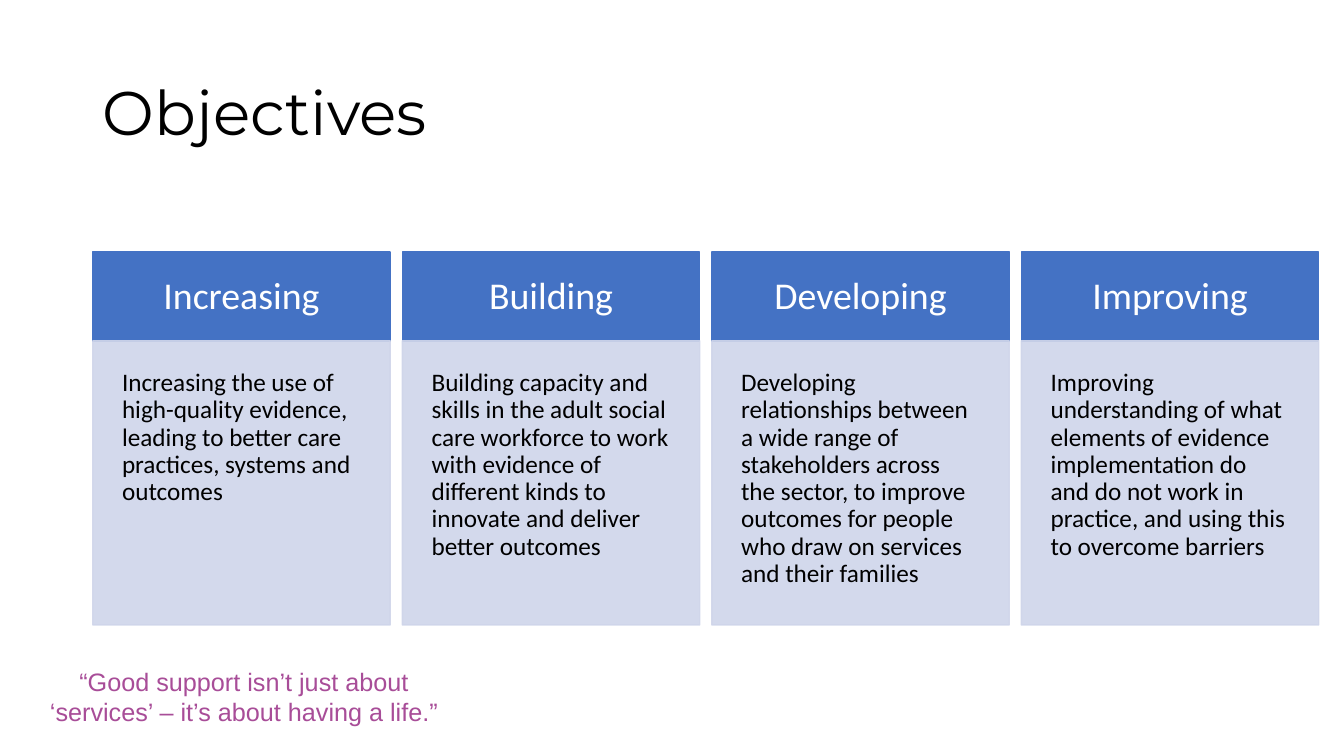
"""Build the Objectives slide: four headed columns and a quote."""
from pptx import Presentation
from pptx.dml.color import RGBColor
from pptx.enum.shapes import MSO_SHAPE as Shape
from pptx.enum.text import MSO_ANCHOR as Anchor, PP_ALIGN as Align
from pptx.oxml.ns import qn
from pptx.util import Inches, Pt
from lxml.etree import SubElement

BLUE = RGBColor(0x44, 0x72, 0xC4)
PALE = RGBColor(0xCF, 0xD5, 0xEA)
PLUM = RGBColor(0xA8, 0x4D, 0x98)
BLACK = RGBColor(0, 0, 0)
WHITE = RGBColor(0xFF, 0xFF, 0xFF)

COLUMNS = [
    ("Increasing", "Increasing the use of high-quality evidence, leading to "
     "better care practices, systems and outcomes"),
    ("Building", "Building capacity and skills in the adult social care "
     "workforce to work with evidence of different kinds to innovate and "
     "deliver better outcomes"),
    ("Developing", "Developing relationships between a wide range of "
     "stakeholders across the sector, to improve outcomes for people who "
     "draw on services and their families"),
    ("Improving", "Improving understanding of what elements of evidence "
     "implementation do and do not work in practice, and using this to "
     "overcome barriers"),
]
QUOTE = ["“Good support isn’t just about", "‘services’ – it’s about having a life.”"]
LEFT, STEP, WIDTH = 0.92, 3.07, 2.95


def write(para, text, font, size, color, align=Align.LEFT, space=None):
    para.alignment = align
    para.line_spacing = space
    run = para.add_run()
    run.text = text
    run.font.name = font
    run.font.size = Pt(size)
    run.font.color.rgb = color


def add_panel(left, top, height, color, inset, anchor):
    panel = slide.shapes.add_shape(
        Shape.RECTANGLE, Inches(left), Inches(top), Inches(WIDTH), Inches(height))
    panel.shadow.inherit = False
    panel.fill.solid()
    panel.fill.fore_color.rgb = color
    panel.line.color.rgb = color
    panel.line.width = Pt(1)
    frame = panel.text_frame
    frame.word_wrap = True
    frame.vertical_anchor = anchor
    frame.margin_left = frame.margin_right = Inches(inset)
    frame.margin_top = frame.margin_bottom = Inches(inset)
    return panel


prs = Presentation()
prs.slide_width, prs.slide_height = Inches(13.33), Inches(7.5)
slide = prs.slides.add_slide(prs.slide_layouts[5])

title = slide.shapes.title
title.left, title.top = Inches(LEFT), Inches(0.77)
title.width, title.height = Inches(11.5), Inches(1.23)
title.text_frame.vertical_anchor = Anchor.TOP
write(title.text_frame.paragraphs[0], "Objectives", "Montserrat", 44, BLACK, space=0.9)

for i, (head, body) in enumerate(COLUMNS):
    left = LEFT + i * STEP
    top = add_panel(left, 2.5, 0.89, BLUE, 0.23, Anchor.MIDDLE)
    write(top.text_frame.paragraphs[0], head, "Calibri", 27, WHITE, Align.CENTER, 0.9)
    base = add_panel(left, 3.38, 2.82, PALE, 0.29, Anchor.TOP)
    write(base.text_frame.paragraphs[0], body, "Calibri", 18, BLACK, space=0.9)
    for tint in base.element.spPr.iter(qn("a:srgbClr")):
        SubElement(tint, qn("a:alpha"), val="90000")

quote = slide.shapes.add_textbox(Inches(0.17), Inches(6.56), Inches(4.5), Inches(0.71))
frame = quote.text_frame
frame.word_wrap = True
for i, line in enumerate(QUOTE):
    para = frame.add_paragraph() if i else frame.paragraphs[0]
    write(para, line, "Arial", 18, PLUM, Align.CENTER)

prs.save("out.pptx")
